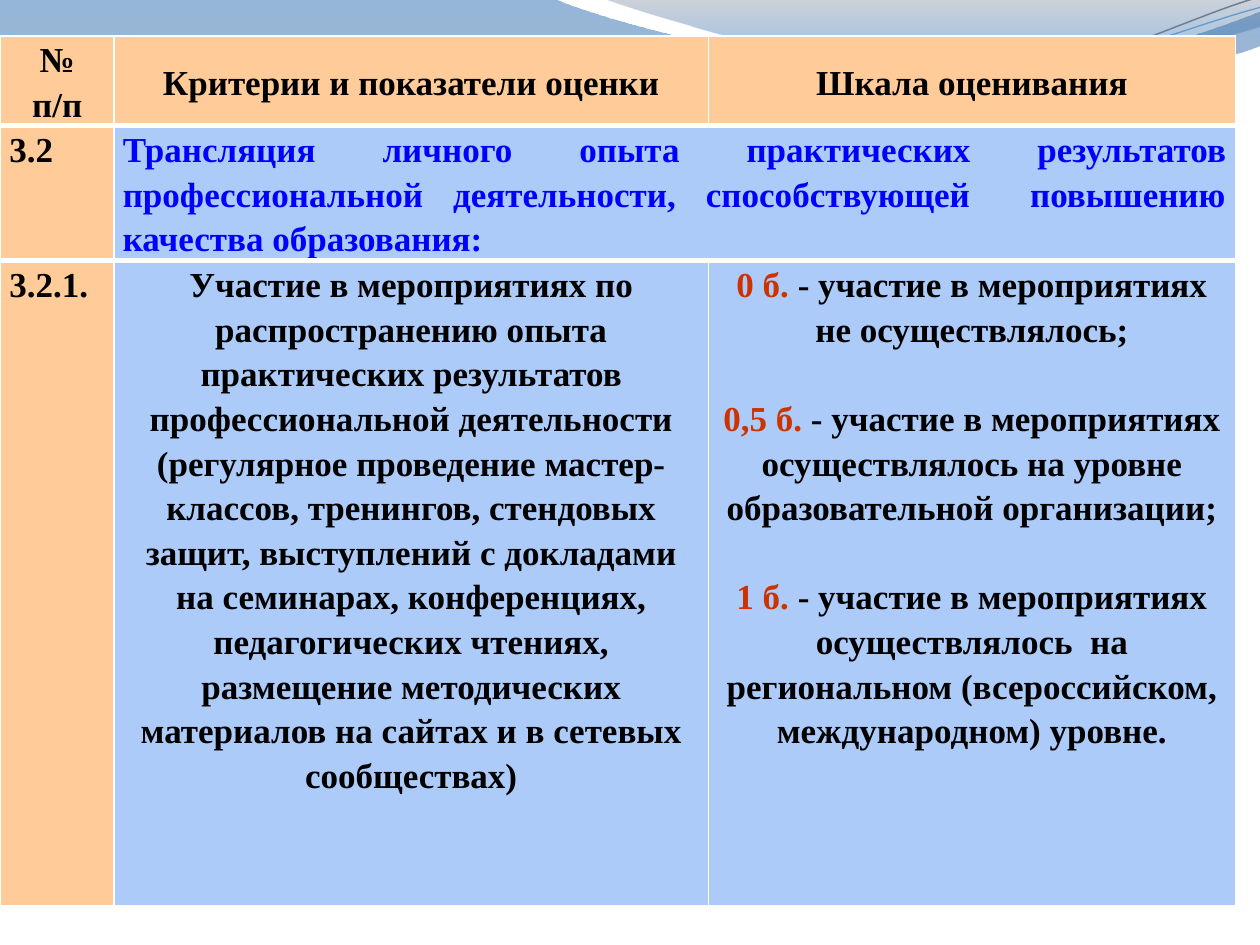
from dataclasses import dataclass
from math import cos, radians, sin
from typing import Optional

from lxml.etree import SubElement
from pptx import Presentation
from pptx.dml.color import RGBColor
from pptx.enum.text import MSO_ANCHOR, PP_ALIGN
from pptx.oxml.ns import qn
from pptx.util import Pt

COLORS = {
    "white": "FFFFFF", "black": "000000", "peach": "FFCC99", "sky": "ACCBF9",
    "blue": "0000FF", "score": "CC3300", "deep": "125EAA", "slate": "697FA4",
    "gray": "596982", "azure": "0670DA", "steel": "707E95", "light": "629DD1",
}
FONT = "Times New Roman"
BLANK_LINE = 25.5
TILT = 2.7


@dataclass
class Stop:
    color: str
    position: float
    alpha: int


@dataclass
class Wave:
    start: tuple
    segments: list
    stops: Optional[tuple] = None
    line: Optional[str] = None
    width: float = 0
    center: Optional[tuple] = None


@dataclass
class Cell:
    row: int
    col: int
    paragraphs: list
    fill: str = "sky"
    color: str = "black"
    align: PP_ALIGN = PP_ALIGN.CENTER
    anchor: MSO_ANCHOR = MSO_ANCHOR.TOP
    gap: float = 0


WAVES = [
    Wave((0, -0.7), [
        (316.8, -0.7), (342.7, 12.2, 478.1, 45.4, 545.8, 45.4),
        (614.2, 45.4, 689.8, 18.7, 720, 6.5), (720.7, 25.9),
        (707.8, 31.7, 626.4, 54.7, 537.1, 54),
        (447.8, 54, 275, 20.2, 185, 24.5),
        (92.9, 25.2, 33.1, 59.8, -0.7, 81.4), (0, -0.7),
    ], stops=(Stop("deep", 0, 45), Stop("slate", 1, 55))),
    Wave((344.9, -0.7), [
        (366.5, 7.9, 491, 44.6, 553.7, 46.8),
        (616.3, 49.7, 691.9, 23, 720, 15.1), (720, 0), (344.9, -0.7),
    ], stops=(Stop("gray", 0, 30), Stop("azure", 0.8, 45))),
    Wave((0, 79.9), [
        (34.6, 67, 113.8, 41, 199.4, 37.4),
        (284.4, 33.8, 427, 64.1, 513.4, 57.6),
        (599.8, 51.1, 675.4, 10.8, 718.6, -1.4),
    ], line="steel", width=0.85, center=(359.3, 41.4)),
    Wave((0, 74.9), [
        (33.8, 69.1, 118.1, 43.9, 203.8, 40.3),
        (290.2, 36.7, 429.8, 59.8, 516.2, 54),
        (601.9, 48.2, 677.5, 15.1, 720, 4.3),
    ], line="light", width=0.75, center=(359.6, 42.5)),
]

COL_WIDTHS = [64.8, 339.8, 301]
ROW_HEIGHTS = [51.2, 77.1, 368.6]
CELLS = [
    Cell(0, 0, ["№", "п/п"], fill="peach"),
    Cell(0, 1, ["Критерии и показатели оценки"], fill="peach", anchor=MSO_ANCHOR.MIDDLE),
    Cell(0, 2, ["Шкала оценивания"], fill="peach", anchor=MSO_ANCHOR.MIDDLE),
    Cell(1, 0, ["3.2"], fill="peach", align=PP_ALIGN.LEFT),
    Cell(1, 1, ["Трансляция личного опыта практических результатов профессиональной "
                "деятельности, способствующей  повышению качества образования:"],
         color="blue", align=PP_ALIGN.JUSTIFY),
    Cell(1, 2, []),
    Cell(2, 0, ["3.2.1."], fill="peach", align=PP_ALIGN.LEFT),
    Cell(2, 1, ["Участие в мероприятиях по распространению опыта практических результатов "
                "профессиональной деятельности (регулярное проведение мастер-классов, "
                "тренингов, стендовых защит, выступлений с докладами на семинарах, "
                "конференциях, педагогических чтениях, размещение методических материалов "
                "на сайтах и в сетевых сообществах)"]),
    Cell(2, 2, [
        ("0 б.", " - участие в мероприятиях не осуществлялось;"),
        ("0,5 б.", " - участие в мероприятиях осуществлялось на уровне "
                   "образовательной организации;"),
        ("1 б.", " - участие в мероприятиях осуществлялось  на региональном "
                 "(всероссийском, международном) уровне."),
    ], gap=BLANK_LINE),
]


def rgb(name: str) -> RGBColor:
    return RGBColor.from_string(COLORS[name])


def turn(point: tuple, center: tuple, degrees: float) -> tuple:
    a = radians(degrees)
    dx, dy = point[0] - center[0], point[1] - center[1]
    return center[0] + dx * cos(a) - dy * sin(a), center[1] + dx * sin(a) + dy * cos(a)


def make_curves(sp, segments: list) -> None:
    lines = list(sp._element.iter(qn("a:lnTo")))
    for segment in segments:
        count = len(segment) // 2
        group, lines = lines[:count], lines[count:]
        if count == 3:
            group[0].addprevious(curve := SubElement(group[0].getparent(), qn("a:cubicBezTo")))
            for line in group:
                curve.append(line[0])
                line.getparent().remove(line)


def draw_wave(shapes, wave: Wave) -> None:
    points = [wave.start] + [seg[i:i + 2] for seg in wave.segments
                             for i in range(0, len(seg), 2)]
    if wave.center:
        points = [turn(point, wave.center, TILT) for point in points]
    points = [(Pt(x), Pt(y)) for x, y in points]
    builder = shapes.build_freeform(*points[0])
    builder.add_line_segments(points[1:], close=wave.stops is not None)
    sp = builder.convert_to_shape()
    make_curves(sp, wave.segments)
    sp.shadow.inherit = False
    if wave.stops:
        sp.line.fill.background()
        sp.fill.gradient()
        sp.fill.gradient_angle = 270
        for target, stop in zip(sp.fill.gradient_stops, wave.stops):
            target.color.rgb = rgb(stop.color)
            target.position = stop.position
        colors = sp._element.spPr.find(qn("a:gradFill")).iter(qn("a:srgbClr"))
        for clr, stop in zip(colors, wave.stops):
            SubElement(clr, qn("a:alpha"), val=str(stop.alpha * 1000))
    else:
        sp.rotation = -TILT
        sp.fill.background()
        sp.line.color.rgb = rgb(wave.line)
        sp.line.width = Pt(wave.width)


def add_run(p, text: str, *, color: str = "black", size: float = 20, bold: bool = True) -> None:
    r = p.add_run()
    r.text = text
    r.font.name, r.font.size, r.font.bold = FONT, Pt(size), bold
    r.font.color.rgb = rgb(color)


def set_borders(cell, **widths: float) -> None:
    tc_pr = cell._tc.get_or_add_tcPr()
    for side, width in widths.items():
        ln = SubElement(tc_pr, qn(f"a:ln{side}"), w=str(Pt(width)))
        fill = SubElement(ln, qn("a:solidFill"))
        SubElement(fill, qn("a:srgbClr"), val=COLORS["white"])


def fill_cell(table, item: Cell) -> None:
    cell = table.cell(item.row, item.col)
    last_row = len(ROW_HEIGHTS) - 1
    set_borders(cell, L=1, R=1, T=3 if item.row else 1, B=3 if item.row < last_row else 1)
    cell.fill.solid()
    cell.fill.fore_color.rgb = rgb(item.fill)
    cell.margin_left = cell.margin_right = Pt(5.1)
    cell.margin_top = cell.margin_bottom = 0
    cell.vertical_anchor = item.anchor
    tf = cell.text_frame
    for i, content in enumerate(item.paragraphs):
        p = tf.add_paragraph() if i else tf.paragraphs[0]
        p.alignment, p.line_spacing = item.align, 1.15
        if i and item.gap:
            p.space_before = Pt(item.gap)
        if isinstance(content, tuple):
            score, content = content
            add_run(p, score, color="score")
        add_run(p, content, color=item.color)


def draw_table(shapes) -> None:
    frame = shapes.add_table(len(ROW_HEIGHTS), len(COL_WIDTHS), Pt(0.3), Pt(20.5),
                             Pt(sum(COL_WIDTHS)), Pt(sum(ROW_HEIGHTS)))
    table = frame.table
    table.horz_banding = False
    for col, width in zip(table.columns, COL_WIDTHS):
        col.width = Pt(width)
    for row, height in zip(table.rows, ROW_HEIGHTS):
        row.height = Pt(height)
    table.cell(1, 1).merge(table.cell(1, 2))
    for item in CELLS:
        fill_cell(table, item)


def main() -> None:
    prs = Presentation()
    prs.slide_width, prs.slide_height = Pt(720), Pt(540)
    s = prs.slides.add_slide(prs.slide_layouts[6])
    for wave in WAVES:
        draw_wave(s.shapes, wave)
    draw_table(s.shapes)
    prs.save("out.pptx")


if __name__ == "__main__":
    main()
